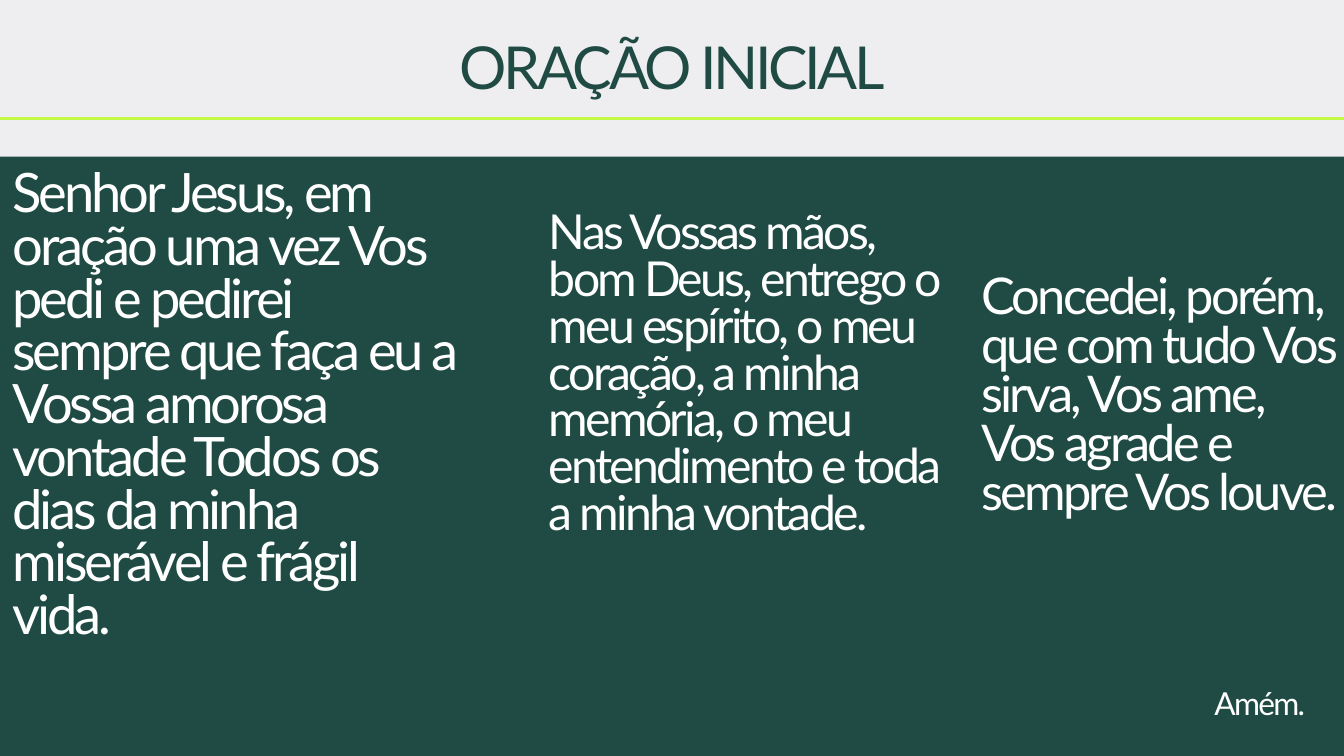
from dataclasses import dataclass

from lxml.etree import SubElement
from pptx import Presentation
from pptx.dml.color import RGBColor
from pptx.enum.shapes import MSO_CONNECTOR as Connector, MSO_SHAPE as Shape
from pptx.enum.text import MSO_ANCHOR as Anchor, MSO_AUTO_SIZE as AutoSize, PP_ALIGN as Align
from pptx.oxml.ns import qn
from pptx.util import Pt

EMU_PER_PX = 9525


def px(*lengths):
    return [length * EMU_PER_PX for length in lengths]


@dataclass(frozen=True)
class Theme:
    font: str = "Lato"
    green: str = "204B44"
    pale: str = "EEEEF0"
    lime: str = "C1F944"
    white: str = "FFFFFF"
    title: float = 63.4
    opening: float = 58.2
    offering: float = 51.6
    request: float = 54.2
    closing: float = 33.9
    leading: float = 0.97
    tracking: float = -0.056
    rule: float = 3.75


class PrayerSlide:
    def __init__(self, deck, theme):
        self.theme = theme
        self.page = deck.slides.add_slide(deck.slide_layouts[5])
        self.paint(self.page.background.fill, theme.green)

    def paint(self, fill, color):
        fill.solid()
        fill.fore_color.rgb = RGBColor.from_string(color)

    def band(self, color, left, top, width, height):
        shape = self.page.shapes.add_shape(Shape.RECTANGLE, *px(left, top, width, height))
        shape.shadow.inherit = False
        self.paint(shape.fill, color)
        shape.line.fill.background()

    def rule(self, color, start, end, height):
        line = self.page.shapes.add_connector(Connector.STRAIGHT, *px(start, height, end, height))
        self.paint(line.line.fill, color)
        line.line.width = Pt(self.theme.rule)
        SubElement(line._element.spPr, qn("a:effectLst"))

    def title(self, words, place):
        box = self.page.shapes.title
        for name, length in zip(("left", "top", "width", "height"), px(*place)):
            setattr(box, name, length)
        self.page.shapes._spTree.append(box._element)
        self.typeset(box, words, self.theme.title, self.theme.green, Align.CENTER)

    def text(self, words, size, place):
        box = self.page.shapes.add_textbox(*px(*place))
        self.typeset(box, words, size, self.theme.white, Align.LEFT)

    def typeset(self, box, words, size, color, align):
        frame = box.text_frame
        para = frame.paragraphs[0]
        span = para.add_run()
        span.text = words
        margins = dict.fromkeys(("margin_left", "margin_top", "margin_right", "margin_bottom"), 0)
        formats = (
            (frame, {**margins, "word_wrap": True, "vertical_anchor": Anchor.TOP,
                     "auto_size": AutoSize.SHAPE_TO_FIT_TEXT}),
            (para, {"alignment": align, "line_spacing": Pt(round(size * self.theme.leading, 1)),
                    "space_before": Pt(0), "space_after": Pt(0)}),
            (span.font, {"name": self.theme.font, "size": Pt(size), "bold": False}),
        )
        for target, values in formats:
            for name, value in values.items():
                setattr(target, name, value)
        self.paint(span.font.fill, color)
        tracking = round(size * self.theme.tracking, 1)
        span._r.get_or_add_rPr().set("spc", str(round(tracking * 100)))


def main():
    theme = Theme()
    deck = Presentation()
    deck.slide_width, deck.slide_height = px(1920, 1080)
    slide = PrayerSlide(deck, theme)

    slide.band(theme.pale, -21, -12, 1963, 236)
    passages = (
        ("Senhor Jesus, em oração uma vez Vos pedi e pedirei sempre que faça eu a "
         "Vossa amorosa vontade Todos os dias da minha miserável e frágil vida.",
         theme.opening, (18, 244, 637, 771)),
        ("Nas Vossas mãos, bom Deus, entrego o meu espírito, o meu coração, a minha "
         "memória, o meu entendimento e toda a minha vontade.",
         theme.offering, (784, 304, 564, 684)),
        ("Concedei, porém, que com tudo Vos sirva, Vos ame, Vos agrade e sempre Vos louve.",
         theme.request, (1402, 393, 518, 579)),
        ("Amém.", theme.closing, (1735, 988, 371, 55)),
    )
    for words, size, place in passages:
        slide.text(words, size, place)
    slide.title("ORAÇÃO INICIAL", (337, 63, 1247, 104))
    slide.rule(theme.lime, -111, 2031, 169)

    deck.save("out.pptx")


if __name__ == "__main__":
    main()
